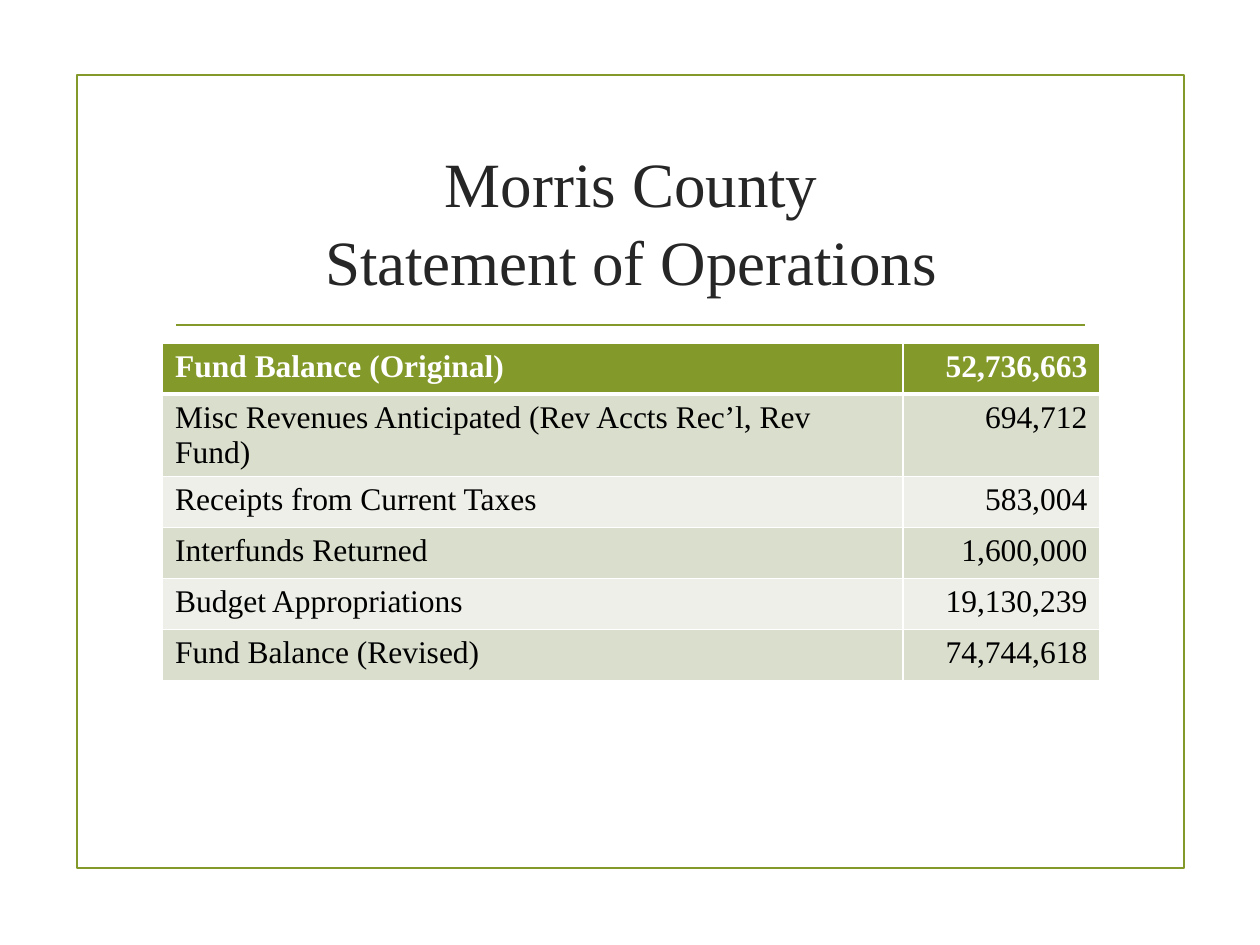
from typing import NamedTuple

from lxml.etree import SubElement
from pptx import Presentation
from pptx.dml.color import RGBColor
from pptx.enum.shapes import MSO_CONNECTOR, MSO_SHAPE
from pptx.enum.text import MSO_ANCHOR, MSO_AUTO_SIZE, PP_ALIGN
from pptx.oxml.ns import qn
from pptx.util import Emu, Inches, Pt

FONT = "Times New Roman"
COLORS = {
    "green": "83992A",
    "title": "262626",
    "white": "FFFFFF",
    "black": "000000",
    "dark_band": "D9DECD",
    "light_band": "EDEFE8",
}
WIDTH, HEIGHT = Inches(10), Inches(7.5)
LEFT, CONTENT_WIDTH = 0.129, 0.744  # shares of the slide's width
TABLE_TOP, ROW_HEIGHT = 0.363, 0.054  # shares of the slide's height
COLUMN_SHARES = (0.79, 0.21)
TITLE_LINES = ("Morris County", "Statement of Operations")


class Entry(NamedTuple):
    label: str
    amount: str


class RowStyle(NamedTuple):
    fill: str
    text: str
    bold: bool
    bottom_border: float


ENTRIES = (
    Entry("Fund Balance (Original)", "52,736,663"),
    Entry("Misc Revenues Anticipated (Rev Accts Rec’l, Rev Fund)", "694,712"),
    Entry("Receipts from Current Taxes", "583,004"),
    Entry("Interfunds Returned", "1,600,000"),
    Entry("Budget Appropriations", "19,130,239"),
    Entry("Fund Balance (Revised)", "74,744,618"),
)
HEADER = RowStyle("green", "white", True, 3)
BANDS = (
    RowStyle("light_band", "black", False, 1),
    RowStyle("dark_band", "black", False, 1),
)


def across(share: float) -> Emu:
    return Emu(round(WIDTH * share))


def down(share: float) -> Emu:
    return Emu(round(HEIGHT * share))


def color(name: str) -> RGBColor:
    return RGBColor.from_string(COLORS[name])


def add_run(para, text: str, size: float, color_name: str, bold: bool = False) -> None:
    span = para.add_run()
    span.text = text
    span.font.name = FONT
    span.font.size = Pt(size)
    span.font.bold = bold
    span.font.color.rgb = color(color_name)


def style_line(shape) -> None:
    shape.line.color.rgb = color("green")
    shape.line.width = Pt(1.25)


def add_frame(page) -> None:
    frame = page.shapes.add_shape(
        MSO_SHAPE.RECTANGLE, across(0.061), down(0.079), across(0.879), down(0.84)
    )
    frame.shadow.inherit = False
    frame.fill.background()
    style_line(frame)


def add_rule(page) -> None:
    height = down(0.344)
    rule = page.shapes.add_connector(
        MSO_CONNECTOR.STRAIGHT, across(0.14), height, across(0.861), height
    )
    style_line(rule)
    SubElement(rule._element.spPr, qn("a:effectLst"))


def fill_title(page) -> None:
    title = page.shapes.title
    title.left, title.top = across(LEFT), Inches(1)
    title.width, title.height = across(CONTENT_WIDTH), Inches(1.43)
    box = title.text_frame
    box.word_wrap = True
    box.auto_size = MSO_AUTO_SIZE.NONE
    box.vertical_anchor = MSO_ANCHOR.MIDDLE
    box.margin_top = Inches(0.12)
    para = box.paragraphs[0]
    para.alignment = PP_ALIGN.CENTER
    para.line_spacing = 1.03
    for index, text in enumerate(TITLE_LINES):
        if index:
            para.add_line_break()
        add_run(para, text, 36, "title")


def set_borders(cell, bottom: float, top: float) -> None:
    properties = cell._tc.get_or_add_tcPr()
    for side, width in (("L", 1), ("R", 1), ("T", top), ("B", bottom)):
        border = SubElement(properties, qn(f"a:ln{side}"), w=str(Pt(width)))
        solid = SubElement(border, qn("a:solidFill"))
        SubElement(solid, qn("a:srgbClr"), val=COLORS["white"])


def fill_cell(cell, text: str, align, style: RowStyle, top_border: float) -> None:
    set_borders(cell, style.bottom_border, top_border)
    cell.fill.solid()
    cell.fill.fore_color.rgb = color(style.fill)
    para = cell.text_frame.paragraphs[0]
    para.alignment = align
    add_run(para, text, 18, style.text, style.bold)


def add_fund_table(page) -> None:
    table = page.shapes.add_table(
        len(ENTRIES), len(COLUMN_SHARES), across(LEFT), down(TABLE_TOP),
        across(CONTENT_WIDTH), down(ROW_HEIGHT * len(ENTRIES)),
    ).table
    for column, share in zip(table.columns, COLUMN_SHARES):
        column.width = across(CONTENT_WIDTH * share)
    top_border = 1
    for index, entry in enumerate(ENTRIES):
        table.rows[index].height = down(ROW_HEIGHT)
        style = BANDS[index % 2] if index else HEADER
        for column, (text, align) in enumerate(zip(entry, (PP_ALIGN.LEFT, PP_ALIGN.RIGHT))):
            fill_cell(table.cell(index, column), text, align, style, top_border)
        top_border = style.bottom_border


def main() -> None:
    deck = Presentation()
    deck.slide_width, deck.slide_height = WIDTH, HEIGHT
    page = deck.slides.add_slide(deck.slide_layouts[5])
    # Border and rule under the heading
    add_frame(page)
    add_rule(page)
    # Heading and figures
    fill_title(page)
    add_fund_table(page)
    deck.save("out.pptx")


if __name__ == "__main__":
    main()
